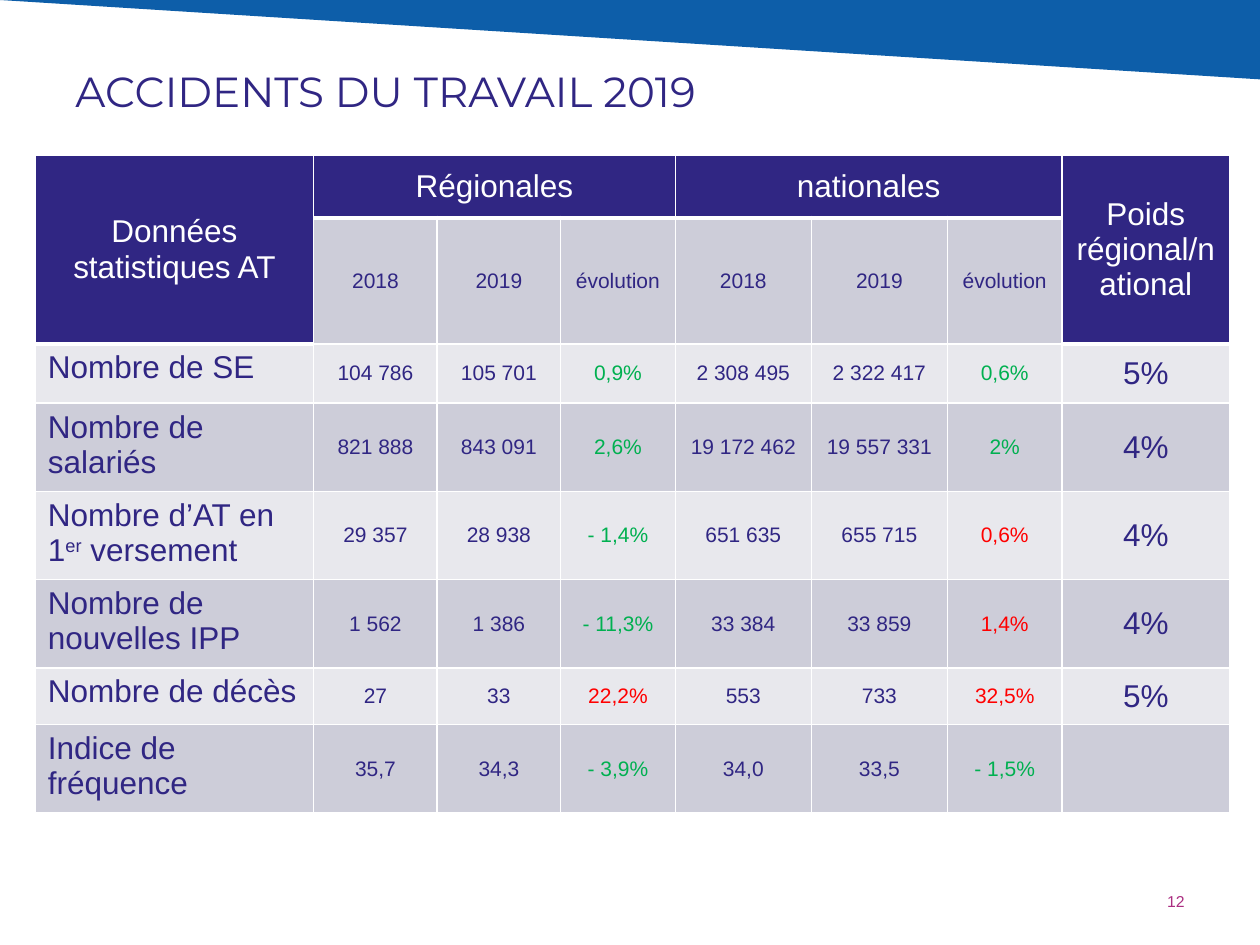
from lxml import etree
from pptx import Presentation
from pptx.dml.color import RGBColor
from pptx.enum.shapes import MSO_SHAPE
from pptx.enum.text import MSO_ANCHOR, PP_ALIGN
from pptx.oxml.ns import qn
from pptx.util import Inches, Pt

LEFT, CENTER, RIGHT = PP_ALIGN.LEFT, PP_ALIGN.CENTER, PP_ALIGN.RIGHT
TOP, MIDDLE = MSO_ANCHOR.TOP, MSO_ANCHOR.MIDDLE
TRIANGLE = MSO_SHAPE.RIGHT_TRIANGLE

WHITE = RGBColor(0xFF, 0xFF, 0xFF)
BLUE = RGBColor(0x0D, 0x5E, 0xA9)
INDIGO = RGBColor(0x30, 0x26, 0x83)
MAGENTA = RGBColor(0xAB, 0x2E, 0x81)
DARK_BAND = RGBColor(0xCD, 0xCD, 0xD9)
LIGHT_BAND = RGBColor(0xE8, 0xE8, 0xED)
GREEN = RGBColor(0x00, 0xB0, 0x50)
RED = RGBColor(0xFF, 0x00, 0x00)

COLS = [2.21, 0.98, 0.98, 0.91, 1.08, 1.08, 0.91, 1.33]
ROWS = [0.5, 0.5, 0.47, 0.68, 0.68, 0.68, 0.45, 0.68]
# text, row, column, rows spanned, columns spanned
HEADERS = [
    ("Données statistiques AT", 0, 0, 2, 1),
    ("Régionales", 0, 1, 1, 3),
    ("nationales", 0, 4, 1, 3),
    ("Poids régional/national", 0, 7, 2, 1),
]
SUBHEADERS = ["2018", "2019", "évolution"] * 2
EVOLUTION_COLS = (3, 6)
# label runs (every second one is superscript), whether growth is good, values
DATA = [
    (["Nombre de SE"], True,
     ["104 786", "105 701", "0,9%", "2 308 495", "2 322 417", "0,6%", "5%"]),
    (["Nombre de salariés"], True,
     ["821 888", "843 091", "2,6%", "19 172 462", "19 557 331", "2%", "4%"]),
    (["Nombre d’AT en 1", "er", " versement"], False,
     ["29 357", "28 938", "- 1,4%", "651 635", "655 715", "0,6%", "4%"]),
    (["Nombre de nouvelles IPP"], False,
     ["1 562", "1 386", "- 11,3%", "33 384", "33 859", "1,4%", "4%"]),
    (["Nombre de décès"], False,
     ["27", "33", "22,2%", "553", "733", "32,5%", "5%"]),
    (["Indice de fréquence"], False,
     ["35,7", "34,3", "- 3,9%", "34,0", "33,5", "- 1,5%", ""]),
]


def write(tf, runs, size, color, align=LEFT, font="Arial"):
    p = tf.paragraphs[0]
    p.alignment = align
    p.font.size, p.font.name, p.font.bold = Pt(size), font, False
    p.font.color.rgb = color
    for i, text in enumerate(runs):
        r = p.add_run()
        r.text = text
        if i % 2:
            r._r.get_or_add_rPr().set("baseline", "30000")


def add_text(s, box, text, size, color, align=LEFT, font="Arial", bottom=0.05):
    tf = s.shapes.add_textbox(*map(Inches, box)).text_frame
    tf.word_wrap = True
    tf.vertical_anchor = MIDDLE
    tf.margin_bottom = Inches(bottom)
    write(tf, [text], size, color, align, font)


def add_banner(s, box):
    sp = s.shapes.add_shape(TRIANGLE, *map(Inches, box))
    sp.rotation = 180
    sp.shadow.inherit = False
    sp.fill.solid()
    sp.fill.fore_color.rgb = BLUE
    sp.line.fill.background()


def set_borders(cell, bottom):
    tcPr = cell._tc.get_or_add_tcPr()
    for side, width in (("L", 1), ("R", 1), ("T", 1), ("B", bottom)):
        ln = etree.SubElement(tcPr, qn(f"a:ln{side}"), w=str(Pt(width)))
        fill = etree.SubElement(ln, qn("a:solidFill"))
        etree.SubElement(fill, qn("a:srgbClr"), val=str(WHITE))


def fill_cell(cell, runs, size, color, band, align=CENTER, anchor=MIDDLE, bottom=1):
    set_borders(cell, bottom)
    cell.fill.solid()
    cell.fill.fore_color.rgb = band
    cell.vertical_anchor = anchor
    write(cell.text_frame, runs, size, color, align)


def add_statistics(s, left, top):
    table = s.shapes.add_table(len(ROWS), len(COLS), Inches(left), Inches(top),
                               Inches(sum(COLS)), Inches(sum(ROWS))).table
    table.first_row = table.horz_banding = False
    for column, width in zip(table.columns, COLS):
        column.width = Inches(width)
    for row, height in zip(table.rows, ROWS):
        row.height = Inches(height)

    for text, r, c, height, width in HEADERS:
        cell = table.cell(r, c)
        cell.merge(table.cell(r + height - 1, c + width - 1))
        fill_cell(cell, [text], 18, WHITE, INDIGO, bottom=3)
    for c, text in enumerate(SUBHEADERS, 1):
        fill_cell(table.cell(1, c), [text], 12, INDIGO, DARK_BAND)

    for r, (label, growth_is_good, values) in enumerate(DATA, 2):
        band = DARK_BAND if r % 2 else LIGHT_BAND
        fill_cell(table.cell(r, 0), label, 18, INDIGO, band, LEFT, TOP)
        for c, value in enumerate(values, 1):
            color = INDIGO
            if c in EVOLUTION_COLS:
                grows = not value.startswith("-")
                color = GREEN if grows == growth_is_good else RED
            size = 18 if c == len(values) else 12
            fill_cell(table.cell(r, c), [value] if value else [], size, color, band)


def main():
    prs = Presentation()
    prs.slide_width, prs.slide_height = Inches(10), Inches(7.5)
    s = prs.slides.add_slide(prs.slide_layouts[6])
    add_banner(s, (0, 0, 10, 0.63))
    add_text(s, (0.5, 0.07, 9, 1.25), "ACCIDENTS DU TRAVAIL 2019", 24, INDIGO,
             font="Montserrat", bottom=0)
    add_text(s, (7.17, 6.95, 2.33, 0.4), "12", 9, MAGENTA, RIGHT)
    add_statistics(s, 0.28, 1.23)
    prs.save("out.pptx")


if __name__ == "__main__":
    main()
